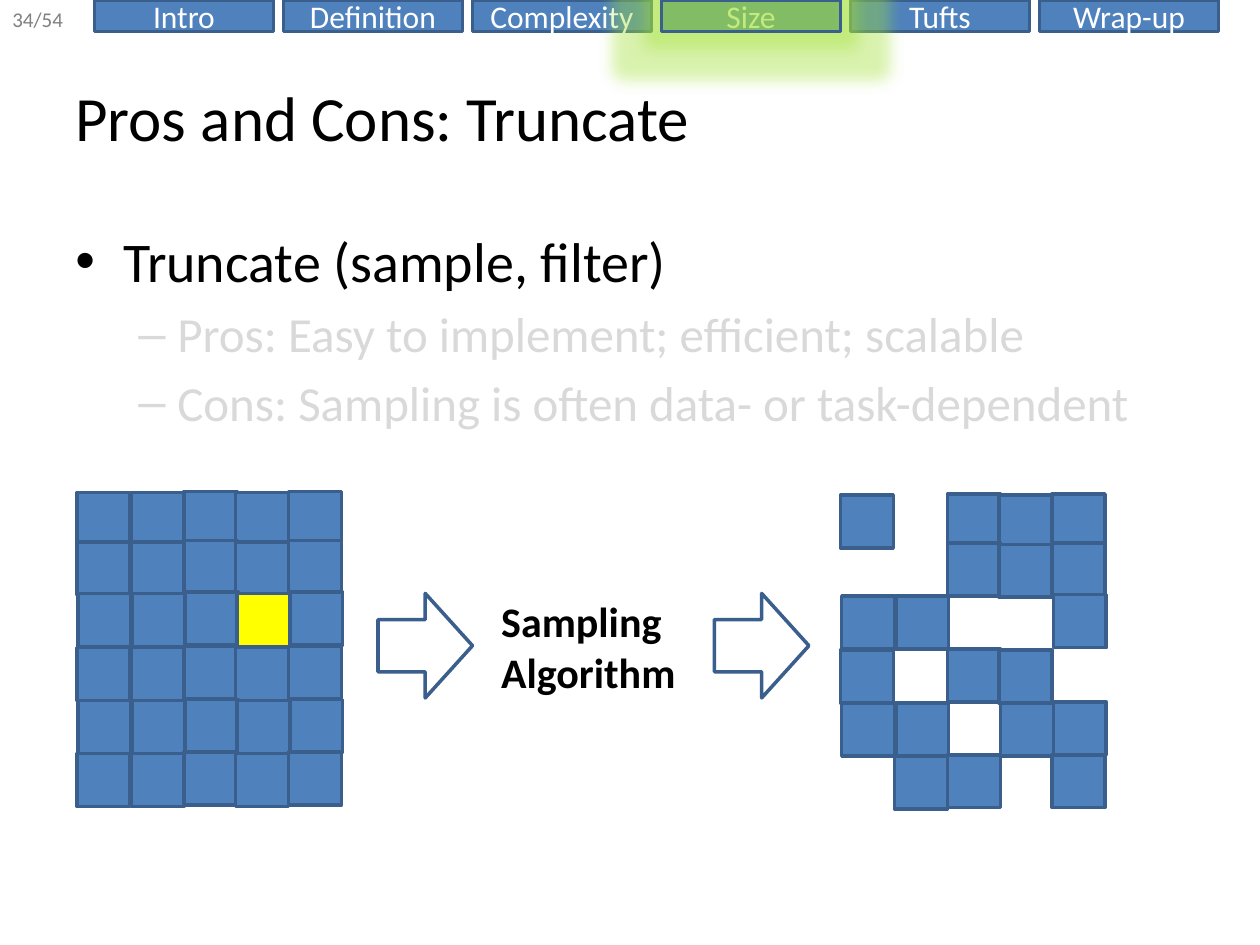
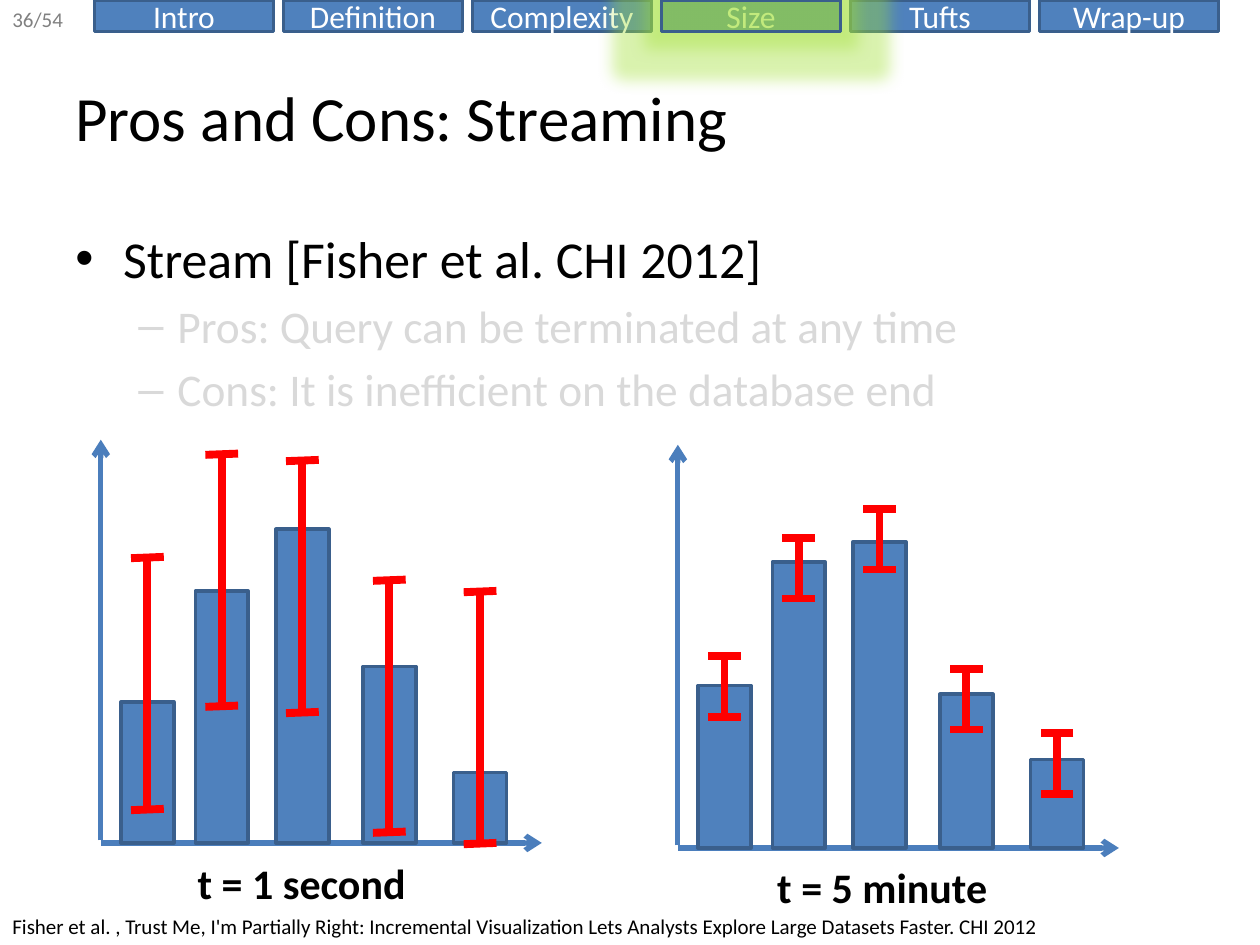
from dataclasses import dataclass

from lxml import etree
from pptx import Presentation
from pptx import util as u
from pptx.dml.color import RGBColor
from pptx.enum import shapes, text
from pptx.oxml import ns
from pptx.shapes.autoshape import Shape
from pptx.shapes.connector import Connector
from pptx.slide import Slide


@dataclass(frozen=True)
class Theme:
    font: str = "Calibri"
    blue: str = "4F81BD"
    outline: str = "3A5F8C"
    axis: str = "4B7EBC"
    red: str = "FF0000"
    yellow: str = "FFFF00"
    glow: str = "A2E134"
    white: str = "FFFFFF"
    black: str = "000000"
    gray: str = "808080"
    faded: str = "D9D9D9"
    title_size: float = 36
    label_size: float = 24
    tab_size: float = 18
    small_size: float = 12
    outline_width: float = 2
    axis_width: float = 3
    error_width: float = 4.5


@dataclass(frozen=True)
class Box:
    left: float
    top: float
    width: float
    height: float

    def lengths(self) -> list[u.Length]:
        return [u.Inches(v) for v in (self.left, self.top, self.width, self.height)]


@dataclass(frozen=True)
class Bullet:
    words: str
    size: float
    color: str
    level: int = 0


@dataclass(frozen=True)
class Bar:
    height: float
    error_top: float


@dataclass(frozen=True)
class BarPlot:
    left: float
    base: float
    bars: list[Bar]
    error_length: float
    cap_tilt: float
    caption: str
    caption_box: Box


THEME = Theme()
TABS = ["Intro", "Definition", "Complexity", "Size", "Tufts", "Wrap-up"]
ACTIVE_TAB = "Size"
TAB_PITCH = 1.5

# Bullet glyph, left margin and hanging indent for each level
BULLET_LEVELS = [("•", 0.38, -0.38), ("–", 0.81, -0.31)]

# Tile offsets: some rows and columns are nudged slightly
TILE = 0.42
TILE_COLUMNS = [0, 0.43, 0.85, 1.26, 1.68]
TILE_ROWS = [0, 0.39, 0.8, 1.23, 1.65, 2.07]
NUDGE = 0.01
FULL_DATA = ["XXXXX", "XXXXX", "XXXYX", "XXXXX", "XXXXX", "XXXXX"]
SAMPLED_DATA = ["X.XXX", "..XXX", "XX..X", "X.XX.", "XX.XX", ".XX.X"]

BAR_WIDTH = 0.42
BAR_OFFSETS = [0.16, 0.75, 1.39, 2.08, 2.8]
AXIS_WIDTH = 3.5
AXIS_HEIGHT = 3.2
CAP_HALF = 0.13


def add_run(paragraph, words: str, size: float, color: str, bold: bool = False) -> None:
    run = paragraph.add_run()
    run.text = words
    run.font.name = THEME.font
    run.font.size = u.Pt(size)
    run.font.bold = bold
    run.font.color.rgb = RGBColor.from_string(color)


def add_text(slide: Slide, box: Box, lines: list[str], size: float,
             color: str = THEME.black, bold: bool = False, wrap: bool = False,
             anchor: text.MSO_ANCHOR = text.MSO_ANCHOR.TOP) -> None:
    frame = slide.shapes.add_textbox(*box.lengths()).text_frame
    frame.word_wrap = wrap
    frame.vertical_anchor = anchor
    for index, line in enumerate(lines):
        paragraph = frame.add_paragraph() if index else frame.paragraphs[0]
        add_run(paragraph, line, size, color, bold)


def add_block(slide: Slide, box: Box, fill: str | None = THEME.blue,
              kind: shapes.MSO_SHAPE = shapes.MSO_SHAPE.RECTANGLE) -> Shape:
    shape = slide.shapes.add_shape(kind, *box.lengths())
    shape.shadow.inherit = False
    if fill:
        shape.fill.solid()
        shape.fill.fore_color.rgb = RGBColor.from_string(fill)
    else:
        shape.fill.background()
    shape.line.color.rgb = RGBColor.from_string(THEME.outline)
    shape.line.width = u.Pt(THEME.outline_width)
    return shape


def add_line(slide: Slide, start: tuple[float, float], end: tuple[float, float],
             color: str, width: float, arrow: bool = False) -> Connector:
    line = slide.shapes.add_connector(
        shapes.MSO_CONNECTOR.STRAIGHT, *[u.Inches(v) for v in (*start, *end)])
    line.line.color.rgb = RGBColor.from_string(color)
    line.line.width = u.Pt(width)
    properties = line.element.spPr
    if arrow:
        etree.SubElement(properties.find(ns.qn("a:ln")), ns.qn("a:tailEnd"), type="arrow")
    etree.SubElement(properties, ns.qn("a:effectLst"))
    return line


# Parts shared by both slides
def tab_box(name: str) -> Box:
    return Box(0.75 + TAB_PITCH * TABS.index(name), 0, 1.42, 0.25)


def start_slide(presentation, page: str, title: str) -> Slide:
    slide = presentation.slides.add_slide(presentation.slide_layouts[6])
    for name in TABS:
        frame = add_block(slide, tab_box(name)).text_frame
        frame.vertical_anchor = text.MSO_ANCHOR.MIDDLE
        frame.paragraphs[0].alignment = text.PP_ALIGN.CENTER
        add_run(frame.paragraphs[0], name, THEME.tab_size, THEME.white)
    add_text(slide, Box(0, 0, 0.64, 0.3), [page], THEME.small_size, THEME.gray)
    add_text(slide, Box(0.5, 0.3, 9, 1.25), [title], THEME.title_size,
             wrap=True, anchor=text.MSO_ANCHOR.MIDDLE)
    return slide


def highlight_active_tab(slide: Slide) -> None:
    shape = add_block(slide, tab_box(ACTIVE_TAB), fill=None)
    effects = shape.element.spPr.find(ns.qn("a:effectLst"))
    glow = etree.SubElement(effects, ns.qn("a:glow"), rad=str(u.Inches(0.25)))
    color = etree.SubElement(glow, ns.qn("a:srgbClr"), val=THEME.glow)
    etree.SubElement(color, ns.qn("a:alpha"), val="40000")


def add_bullets(slide: Slide, height: float, bullets: list[Bullet]) -> None:
    frame = slide.shapes.add_textbox(*Box(0.5, 1.75, 9, height).lengths()).text_frame
    frame.word_wrap = True
    for index, bullet in enumerate(bullets):
        paragraph = frame.add_paragraph() if index else frame.paragraphs[0]
        glyph, margin, indent = BULLET_LEVELS[bullet.level]
        properties = paragraph._p.get_or_add_pPr()
        properties.set("marL", str(u.Inches(margin)))
        properties.set("indent", str(u.Inches(indent)))
        etree.SubElement(properties, ns.qn("a:buFont"), typeface="Arial")
        etree.SubElement(properties, ns.qn("a:buChar"), char=glyph)
        paragraph.level = bullet.level
        if index:
            paragraph.space_before = u.Pt(round(bullet.size * 0.2, 1))
        add_run(paragraph, bullet.words, bullet.size, bullet.color)


# Tile grids for the truncate slide
def add_tiles(slide: Slide, left: float, top: float, rows: list[str]) -> None:
    fills = {"X": THEME.blue, "Y": THEME.yellow}
    for row, marks in enumerate(rows):
        shift = NUDGE if row in (2, 4) else 0
        for column, mark in enumerate(marks):
            if mark in fills:
                lift = NUDGE if column in (2, 4) else 0
                add_block(slide, Box(left + TILE_COLUMNS[column] + shift,
                                     top + TILE_ROWS[row] - lift, TILE, TILE), fills[mark])


def add_arrow(slide: Slide, left: float) -> None:
    add_block(slide, Box(left, 4.71, 0.75, 0.83), None, shapes.MSO_SHAPE.RIGHT_ARROW)


# Sketched bar plots for the streaming slide
def add_error_bar(slide: Slide, center: float, top: float, plot: BarPlot) -> None:
    bottom = top + plot.error_length
    add_line(slide, (center, top), (center, bottom), THEME.red, THEME.error_width)
    for y in (top, bottom):
        add_line(slide, (center + CAP_HALF, y), (center - CAP_HALF, y + plot.cap_tilt),
                 THEME.red, THEME.error_width)


def add_bar_plot(slide: Slide, plot: BarPlot) -> None:
    left, base = plot.left, plot.base
    add_line(slide, (left, base - 0.02), (left, base - AXIS_HEIGHT),
             THEME.axis, THEME.axis_width, arrow=True)
    add_line(slide, (left, base), (left + AXIS_WIDTH, base),
             THEME.axis, THEME.axis_width, arrow=True)
    for offset, bar in zip(BAR_OFFSETS, plot.bars):
        add_block(slide, Box(left + offset, base - bar.height, BAR_WIDTH, bar.height))
    for offset, bar in zip(BAR_OFFSETS, plot.bars):
        add_error_bar(slide, left + offset + BAR_WIDTH / 2, bar.error_top, plot)
    add_text(slide, plot.caption_box, [plot.caption], THEME.label_size, bold=True)


def build_truncate(presentation) -> None:
    slide = start_slide(presentation, "34/54", "Pros and Cons: Truncate")
    add_bullets(slide, 4.95, [
        Bullet("Truncate (sample, filter)", 32, THEME.black),
        Bullet("Pros: Easy to implement; efficient; scalable", 28, THEME.faded, 1),
        Bullet("Cons: Sampling is often data- or task-dependent", 28, THEME.faded, 1),
    ])
    add_tiles(slide, 0.61, 3.91, FULL_DATA)
    add_arrow(slide, 3)
    add_text(slide, Box(3.88, 4.68, 1.6, 0.91), ["Sampling", "Algorithm"],
             THEME.label_size, bold=True)
    add_tiles(slide, 6.67, 3.93, SAMPLED_DATA)
    add_arrow(slide, 5.67)
    highlight_active_tab(slide)


def build_streaming(presentation) -> None:
    slide = start_slide(presentation, "36/54", "Pros and Cons: Streaming")
    add_bullets(slide, 1.58, [
        Bullet("Stream [Fisher et al. CHI 2012]", 29.6, THEME.black),
        Bullet("Pros: Query can be terminated at any time", 25.9, THEME.faded, 1),
        Bullet("Cons: It is inefficient on the database end", 25.9, THEME.faded, 1),
    ])
    early = [Bar(1.12, 4.42), Bar(2, 3.6), Bar(2.49, 3.65), Bar(1.4, 4.6), Bar(0.56, 4.69)]
    late = [Bar(1.29, 5.21), Bar(2.27, 4.27), Bar(2.43, 4.04), Bar(1.22, 5.31), Bar(0.7, 5.82)]
    add_bar_plot(slide, BarPlot(0.8, 6.69, early, 2, 0.01, "t = 1 second",
                                Box(1.47, 6.76, 1.87, 0.5)))
    add_bar_plot(slide, BarPlot(5.38, 6.73, late, 0.48, 0, "t = 5 minute",
                                Box(6.07, 6.79, 1.88, 0.5)))
    add_text(slide, Box(0, 7.2, 9.33, 0.3), [
        "Fisher et al. , Trust Me, I'm Partially Right: Incremental Visualization "
        "Lets Analysts Explore Large Datasets Faster. CHI 2012"], THEME.small_size, wrap=True)
    highlight_active_tab(slide)


def main() -> None:
    presentation = Presentation()
    presentation.slide_width = u.Inches(10)
    presentation.slide_height = u.Inches(7.5)
    build_truncate(presentation)
    build_streaming(presentation)
    presentation.save("out.pptx")


if __name__ == "__main__":
    main()
